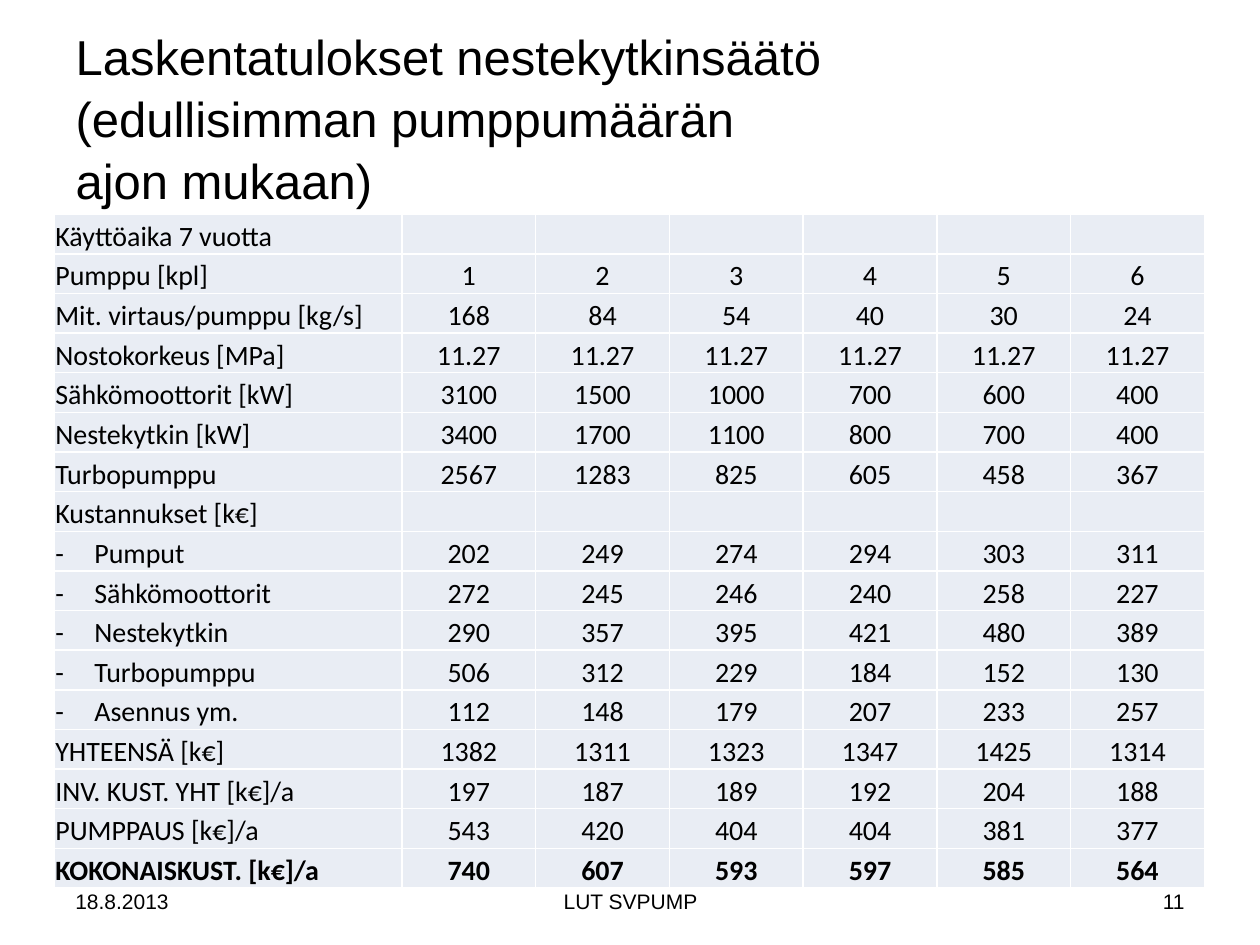
from lxml.etree import SubElement
from pptx import Presentation
from pptx.dml.color import RGBColor
from pptx.enum.text import MSO_ANCHOR, MSO_AUTO_SIZE, PP_ALIGN
from pptx.oxml.ns import qn
from pptx.util import Inches, Pt


def color(hex_text):
    return RGBColor.from_string(hex_text)


def add_run(p, text, size, font, bold=False):
    r = p.add_run()
    r.text = text
    r.font.size = Pt(size)
    r.font.name = font
    r.font.bold = bold
    r.font.color.rgb = color("000000")


prs = Presentation()
prs.slide_width, prs.slide_height = Inches(10), Inches(7.5)
s = prs.slides.add_slide(prs.slide_layouts[5])

# Title
title = s.shapes.title
title.left, title.top = Inches(0.5), Inches(0.3)
title.width, title.height = Inches(9), Inches(1.25)
tf = title.text_frame
tf.word_wrap = True
tf.auto_size = MSO_AUTO_SIZE.NONE
tf.vertical_anchor = MSO_ANCHOR.MIDDLE
p = tf.paragraphs[0]
p.alignment = PP_ALIGN.LEFT
p.line_spacing = 1.05
title_lines = ["Laskentatulokset nestekytkinsäätö",
               "(edullisimman pumppumäärän ", "ajon mukaan)"]
for i, line in enumerate(title_lines):
    if i:
        p.add_line_break()
    add_run(p, line, 28, "Arial")

# Table contents: label, then one value per pump count
rows = [
    ("Käyttöaika 7 vuotta", ""),
    ("Pumppu [kpl]", "1 2 3 4 5 6"),
    ("Mit. virtaus/pumppu [kg/s]", "168 84 54 40 30 24"),
    ("Nostokorkeus [MPa]", "11.27 11.27 11.27 11.27 11.27 11.27"),
    ("Sähkömoottorit [kW]", "3100 1500 1000 700 600 400"),
    ("Nestekytkin [kW]", "3400 1700 1100 800 700 400"),
    ("Turbopumppu", "2567 1283 825 605 458 367"),
    ("Kustannukset [k€]", ""),
    ("Pumput", "202 249 274 294 303 311"),
    ("Sähkömoottorit", "272 245 246 240 258 227"),
    ("Nestekytkin", "290 357 395 421 480 389"),
    ("Turbopumppu", "506 312 229 184 152 130"),
    ("Asennus ym.", "112 148 179 207 233 257"),
    ("YHTEENSÄ [k€]", "1382 1311 1323 1347 1425 1314"),
    ("INV. KUST. YHT [k€]/a", "197 187 189 192 204 188"),
    ("PUMPPAUS [k€]/a", "543 420 404 404 381 377"),
    ("KOKONAISKUST. [k€]/a", "740 607 593 597 585 564"),
]
cost_items = range(8, 13)
total_row = len(rows) - 1
n_values = 6
table_w, table_h, label_w = 9.13, 5.35, 2.76

# Table: the default style supplies the white grid lines
table = s.shapes.add_table(len(rows), n_values + 1, Inches(0.43), Inches(1.7),
                           Inches(table_w), Inches(table_h)).table
table.first_row = False
table.horz_banding = False
for j, col in enumerate(table.columns):
    col.width = Inches((table_w - label_w) / n_values if j else label_w)

for i, (label, values) in enumerate(rows):
    table.rows[i].height = Inches(table_h / len(rows))
    texts = [label] + (values.split() or [""] * n_values)
    for j, text in enumerate(texts):
        cell = table.cell(i, j)
        cell.fill.solid()
        cell.fill.fore_color.rgb = color("E9EDF4")
        cell.vertical_anchor = MSO_ANCHOR.BOTTOM
        cell.margin_left = cell.margin_right = cell.margin_top = Inches(0.01)
        cell.margin_bottom = 0
        p = cell.text_frame.paragraphs[0]
        p.alignment = PP_ALIGN.CENTER if j else PP_ALIGN.LEFT
        if j == 0 and i in cost_items:
            pPr = p._p.get_or_add_pPr()
            pPr.set("marL", str(Inches(0.31)))
            pPr.set("indent", str(-Inches(0.31)))
            SubElement(pPr, qn("a:buFont"), typeface="Calibri")
            SubElement(pPr, qn("a:buChar"), char="-")
        if text:
            add_run(p, text, 16, "Calibri", bold=i == total_row)
        else:
            # Keeps empty cells from stretching the row
            SubElement(p._p, qn("a:endParaRPr"), sz="1600")

# Footer: date, name, slide number
footer = [
    (0.5, 2.33, PP_ALIGN.LEFT, "18.8.2013"),
    (3.42, 3.17, PP_ALIGN.CENTER, "LUT SVPUMP"),
    (7.17, 2.33, PP_ALIGN.RIGHT, "11"),
]
for left, width, align, text in footer:
    box = s.shapes.add_textbox(Inches(left), Inches(6.95), Inches(width), Inches(0.4))
    tf = box.text_frame
    tf.word_wrap = True
    tf.vertical_anchor = MSO_ANCHOR.MIDDLE
    p = tf.paragraphs[0]
    p.alignment = align
    add_run(p, text, 12, "Arial")

prs.save("out.pptx")
